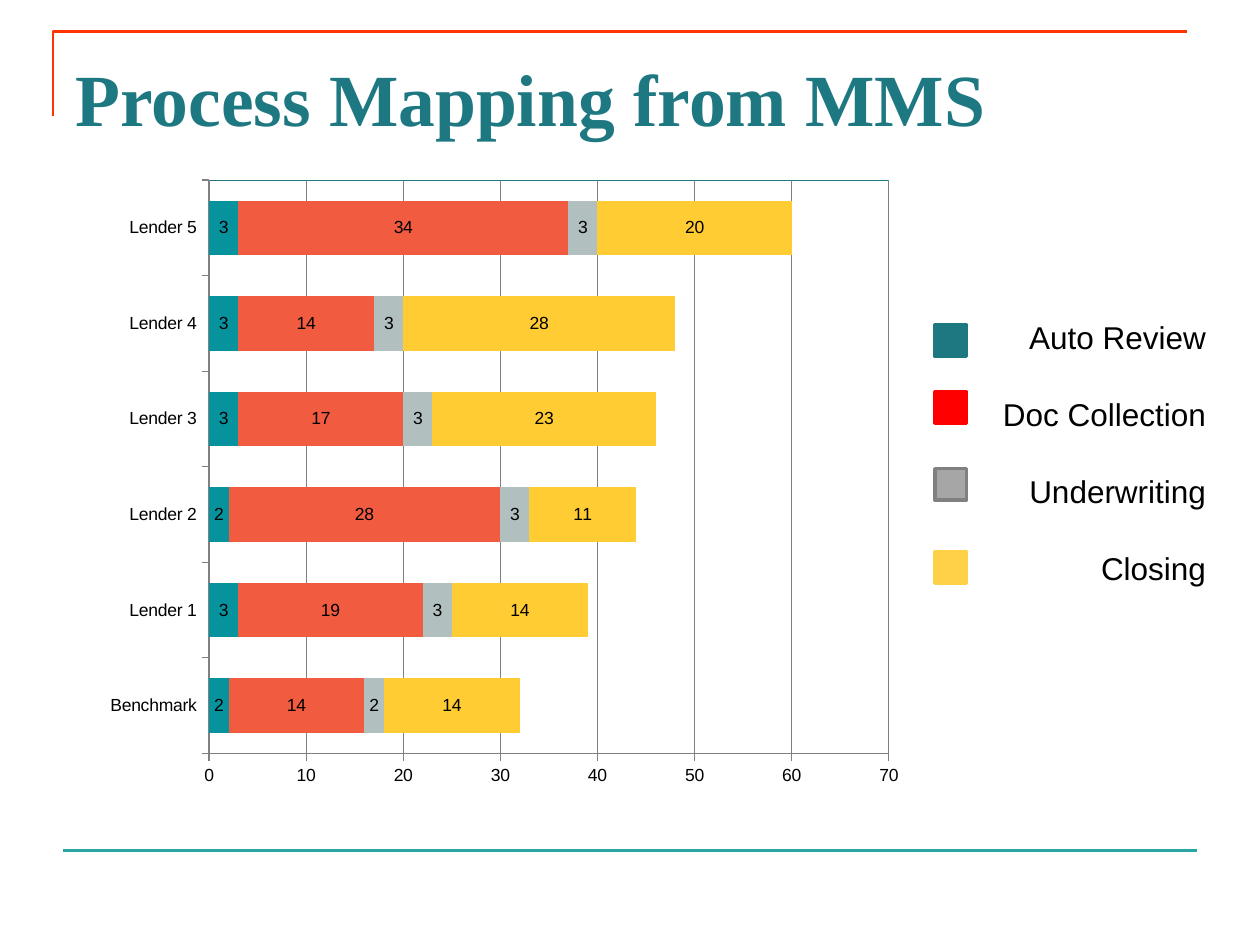
import pptx
import pptx.util
import pptx.oxml
import pptx.chart.data
import pptx.dml.color
import pptx.enum.chart
import pptx.enum.shapes
import pptx.enum.text

Inch, Pt = pptx.util.Inches, pptx.util.Pt
Mark = pptx.enum.chart.XL_TICK_MARK

# Content
TITLE = "Process Mapping from MMS"
CATS = ["Benchmark", "Lender 1", "Lender 2", "Lender 3", "Lender 4", "Lender 5"]
SERIES = [
    ("Series 1", "07939E", [2, 3, 2, 3, 3, 3]),
    ("Series 2", "F15B40", [14, 19, 28, 17, 14, 34]),
    ("Series 3", "B2BFBF", [2, 3, 3, 3, 3, 3]),
    ("Series 4", "FFCC33", [14, 14, 11, 23, 28, 20]),
]
# Legend: label, fill, line, top of its key
STEPS = [
    ("Auto Review", "1E7882", "1E7882", 2.58),
    ("Doc Collection", "FF0000", "FF0000", 3.11),
    ("Underwriting", "A6A6A6", "808080", 3.72),
    ("Closing", "FFD147", "FFD147", 4.38),
]
TEAL, BLACK, GREY = "1E7882", "000000", "808080"
NS = ('xmlns:c="http://schemas.openxmlformats.org/drawingml/2006/chart" '
      'xmlns:a="http://schemas.openxmlformats.org/drawingml/2006/main"')


def rgb(code):
    return pptx.dml.color.RGBColor.from_string(code)


def stroke(line, code, width):
    line.color.rgb = rgb(code)
    line.width = Pt(width)


def style(font, name, size, code, bold=False):
    font.name, font.size, font.bold = name, Pt(size), bold
    font.color.rgb = rgb(code)


deck = pptx.Presentation()
deck.slide_width, deck.slide_height = Inch(10), Inch(7.5)
slide = deck.slides.add_slide(deck.slide_layouts[5])
shapes = slide.shapes

# Corner frame and bottom rule
pen = shapes.build_freeform(Inch(0.42), Inch(0.92))
pen.add_line_segments([(Inch(0.42), Inch(0.25)), (Inch(9.42), Inch(0.25))], close=False)
frame = pen.convert_to_shape()
frame.shadow.inherit = False
frame.fill.background()
stroke(frame.line, "FF3300", 1.5)

rule = shapes.add_connector(pptx.enum.shapes.MSO_CONNECTOR.STRAIGHT,
                            Inch(0.5), Inch(6.75), Inch(9.5), Inch(6.75))
stroke(rule.line, "29A6A3", 1.5)
rule._element.spPr.append(pptx.oxml.parse_xml(f"<a:effectLst {NS}/>"))

# Title
title = shapes.title
title.left, title.top, title.width, title.height = map(Inch, (0.5, 0.3, 9, 1.03))
text = title.text_frame
text.text = TITLE
text.vertical_anchor = pptx.enum.text.MSO_ANCHOR.TOP
text.margin_top = Inch(0.12)
text.paragraphs[0].alignment = pptx.enum.text.PP_ALIGN.LEFT
style(text.paragraphs[0].runs[0].font, "Times New Roman", 42, TEAL, True)

# Stacked bar chart
data = pptx.chart.data.CategoryChartData()
data.categories = CATS
for name, code, vals in SERIES:
    data.add_series(name, vals)
chart = shapes.add_chart(pptx.enum.chart.XL_CHART_TYPE.BAR_STACKED, Inch(0.75),
                         Inch(1.33), Inch(6.5), Inch(5), data).chart
chart.has_legend = chart.has_title = False
style(chart.font, "Arial", 10, BLACK)

plot = chart.plots[0]
plot.gap_width, plot.overlap = 75, 100
plot.vary_by_categories = False
for bar, (name, code, vals) in zip(plot.series, SERIES):
    bar.format.fill.solid()
    bar.format.fill.fore_color.rgb = rgb(code)
    tags = bar.data_labels
    tags.show_value = True
    tags.position = pptx.enum.chart.XL_LABEL_POSITION.CENTER
    style(tags.font, "Arial", 10, BLACK)

for axis in (chart.category_axis, chart.value_axis):
    axis.major_tick_mark, axis.minor_tick_mark = Mark.OUTSIDE, Mark.NONE
    stroke(axis.format.line, GREY, 0.75)
scale = chart.value_axis
scale.minimum_scale, scale.maximum_scale, scale.major_unit = 0, 70, 10
scale.has_major_gridlines = True
stroke(scale.major_gridlines.format.line, GREY, 0.75)

# Plot area: fixed inner place and a teal outline
area = chart._chartSpace.chart.plotArea
for old in area.xpath("c:layout"):
    area.remove(old)
spots = "".join(f'<c:{tag} val="{val}"/>' for tag, val in (
    ("layoutTarget", "inner"), ("xMode", "edge"), ("yMode", "edge"),
    ("x", 0.14), ("y", 0.02), ("w", 0.83), ("h", 0.91)))
area.insert(0, pptx.oxml.parse_xml(
    f"<c:layout {NS}><c:manualLayout>{spots}</c:manualLayout></c:layout>"))
area.append(pptx.oxml.parse_xml(
    f'<c:spPr {NS}><a:noFill/><a:ln w="9525"><a:solidFill>'
    f'<a:srgbClr val="{TEAL}"/></a:solidFill></a:ln></c:spPr>'))

# Legend labels and keys
box = shapes.add_textbox(Inch(7.25), Inch(2.45), Inch(2.42), Inch(2.22))
text = box.text_frame
text.word_wrap = True
text.margin_top = Inch(0.07)
for i, (label, fill, line, top) in enumerate(STEPS):
    para = text.add_paragraph() if i else text.paragraphs[0]
    para.text = label
    para.alignment = pptx.enum.text.PP_ALIGN.RIGHT
    if i:
        para.space_before = Pt(22.5)
    style(para.runs[0].font, "Arial", 18, BLACK)

    key = shapes.add_shape(pptx.enum.shapes.MSO_SHAPE.RECTANGLE,
                           Inch(7.42), Inch(top), Inch(0.25), Inch(0.25))
    key.shadow.inherit = False
    key.fill.solid()
    key.fill.fore_color.rgb = rgb(fill)
    stroke(key.line, line, 2)

deck.save("out.pptx")
